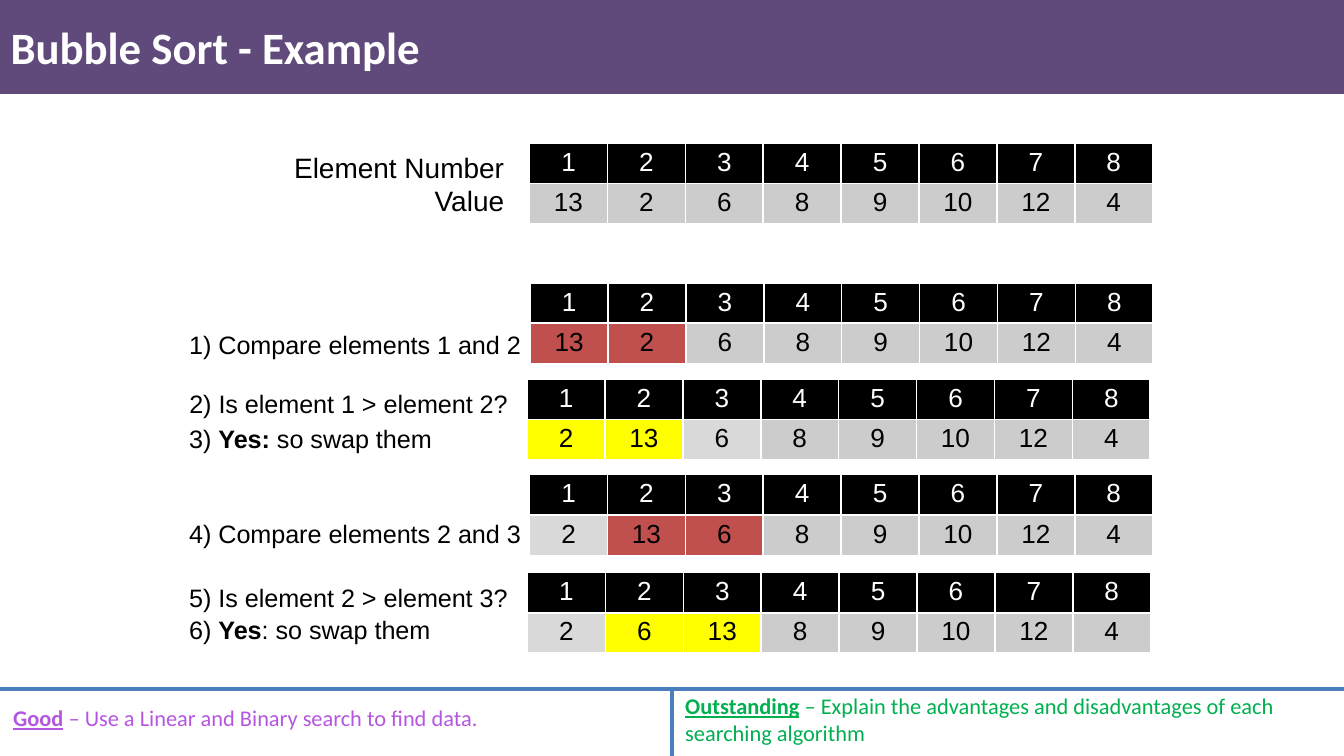
from lxml import etree
from pptx import Presentation
from pptx.dml.color import RGBColor
from pptx.enum.shapes import MSO_CONNECTOR, MSO_SHAPE
from pptx.enum.text import MSO_ANCHOR, PP_ALIGN
from pptx.oxml.ns import qn
from pptx.util import Pt

LINE, RECT = MSO_CONNECTOR.STRAIGHT, MSO_SHAPE.RECTANGLE
LEFT, MID, RIGHT = PP_ALIGN.LEFT, PP_ALIGN.CENTER, PP_ALIGN.RIGHT
MIDDLE = MSO_ANCHOR.MIDDLE

BLACK, WHITE = "000000", "FFFFFF"
GREY, PALE = "CCCCCC", "D9D9D9"
RED, GOLD = "C0504D", "FFFF00"
PURPLE, BLUE = "604A7B", "4B7EBC"
VIOLET, GREEN = "B556E0", "00B050"


def rgb(code):
    return RGBColor.from_string(code)


def write(frame, lines, size, color, font="Arial", align=LEFT):
    """Fill a text frame; each line is a list of (text, style), style from "b" and "u"."""
    for i, line in enumerate(lines):
        para = frame.paragraphs[0] if i == 0 else frame.add_paragraph()
        para.alignment = align
        for text, style in line:
            run = para.add_run()
            run.text = text
            run.font.name = font
            run.font.size = Pt(size)
            run.font.color.rgb = rgb(color)
            run.font.bold = "b" in style
            run.font.underline = "u" in style


prs = Presentation()
prs.slide_width, prs.slide_height = Pt(720), Pt(405)
slide = prs.slides.add_slide(prs.slide_layouts[6])
shapes = slide.shapes

# Header band and footer rules
band = shapes.add_shape(RECT, 0, 0, Pt(720), Pt(50.4))
band.shadow.inherit = False
band.fill.solid()
band.fill.fore_color.rgb = rgb(PURPLE)
band.line.fill.background()

for x1, y1, x2, y2 in [(0, 369.3, 720, 369.3), (360, 369.3, 360, 405)]:
    rule = shapes.add_connector(LINE, Pt(x1), Pt(y1), Pt(x2), Pt(y2))
    rule.line.color.rgb = rgb(BLUE)
    rule.line.width = Pt(2.25)
    etree.SubElement(rule._element.spPr, qn("a:effectLst"))

# Tables: left, top, values, fills of the first three values
steps = [
    (283.7, 76.6, [13, 2, 6], [GREY, GREY, GREY]),
    (284, 151.5, [13, 2, 6], [RED, RED, GREY]),
    (282.4, 203, [2, 13, 6], [GOLD, GOLD, PALE]),
    (283.7, 254.2, [2, 13, 6], [PALE, RED, RED]),
    (282.6, 306.6, [2, 6, 13], [PALE, GOLD, GOLD]),
]
COLS, COL, ROW = 8, 41.75, 21.7

for left, top, values, fills in steps:
    frame = shapes.add_table(2, COLS, Pt(left), Pt(top), Pt(COLS * COL), Pt(2 * ROW))
    table = frame.table
    for col in table.columns:
        col.width = Pt(COL)
    rows = [
        (range(1, COLS + 1), [BLACK] * COLS, WHITE),
        (values + [8, 9, 10, 12, 4], fills + [GREY] * 5, BLACK),
    ]
    for r, (numbers, tints, ink) in enumerate(rows):
        table.rows[r].height = Pt(ROW)
        for c, (number, tint) in enumerate(zip(numbers, tints)):
            cell = table.cell(r, c)
            cell.margin_left = cell.margin_right = Pt(5)
            cell.margin_top = cell.margin_bottom = Pt(2.4)
            props = cell._tc.get_or_add_tcPr()
            for side in ("lnL", "lnR", "lnT", "lnB"):
                edge = etree.SubElement(props, qn("a:" + side), w=str(Pt(1)))
                solid = etree.SubElement(edge, qn("a:solidFill"))
                etree.SubElement(solid, qn("a:srgbClr"), val=WHITE)
            cell.fill.solid()
            cell.fill.fore_color.rgb = rgb(tint)
            write(cell.text_frame, [[(str(number), "")]], 14, ink, align=MID)

# Step labels: top, width, runs
labels = [
    (172.8, 194, [("1) Compare elements 1 and 2", "")]),
    (204.5, 198, [("2) Is element 1 > element 2?", "")]),
    (223.2, 150, [("3) ", ""), ("Yes:", "b"), (" so swap them", "")]),
    (274.3, 194, [("4) Compare elements 2 and 3", "")]),
    (308.2, 189, [("5) Is element 2 > element 3?", "")]),
    (325.4, 150, [("6) ", ""), ("Yes", "b"), (": so swap them", "")]),
]
# Text boxes: left, top, width, height, lines, size, colour, font, alignment
texts = [(94.3, top, width, 24, [runs], 13.5, BLACK, "Arial", LEFT)
         for top, width, runs in labels]
heads = [[("Element Number", "")], [("Value", "")]]
good = [[("Good", "bu"), (" – Use a Linear and Binary search to find data.", "")]]
best = [[("Outstanding", "bu"),
         (" – Explain the advantages and disadvantages of each searching algorithm", "")]]
texts += [
    (128.2, 77, 149, 44, heads, 15, BLACK, "Arial", RIGHT),
    (0, 373.7, 354, 21.8, good, 12, VIOLET, "Calibri", LEFT),
    (360, 367.2, 351.4, 36, best, 12, GREEN, "Calibri", LEFT),
]
for left, top, width, height, *words in texts:
    box = shapes.add_textbox(Pt(left), Pt(top), Pt(width), Pt(height))
    box.text_frame.word_wrap = True
    write(box.text_frame, *words)

title = shapes.add_textbox(Pt(-1.4), Pt(5.8), Pt(720), Pt(38.2))
title.text_frame.word_wrap = True
title.text_frame.vertical_anchor = MIDDLE
write(title.text_frame, [[("Bubble Sort - Example", "b")]], 24, WHITE, "Calibri")

prs.save("out.pptx")
